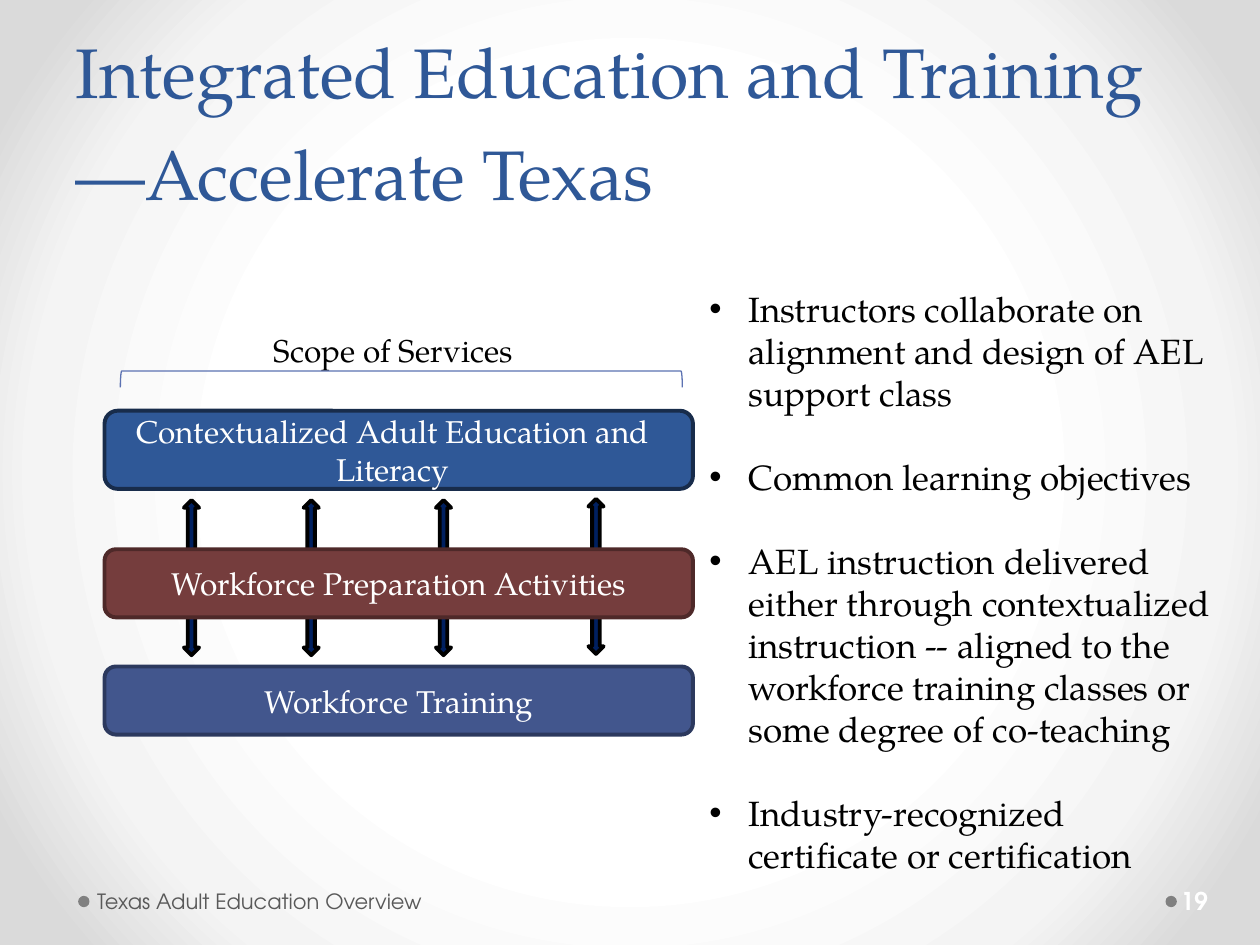
from lxml import etree
from pptx import Presentation
from pptx.dml.color import RGBColor
from pptx.enum.shapes import MSO_SHAPE
from pptx.enum.text import MSO_ANCHOR, MSO_AUTO_SIZE, PP_ALIGN
from pptx.oxml.ns import qn
from pptx.util import Inches, Pt

ROUNDED = MSO_SHAPE.ROUNDED_RECTANGLE
OVAL = MSO_SHAPE.OVAL
ARROW = MSO_SHAPE.UP_DOWN_ARROW
BRACKET = MSO_SHAPE.LEFT_BRACKET
TOP, MIDDLE, BOTTOM = MSO_ANCHOR.TOP, MSO_ANCHOR.MIDDLE, MSO_ANCHOR.BOTTOM
LEFT, CENTER = PP_ALIGN.LEFT, PP_ALIGN.CENTER
NO_AUTOFIT = MSO_AUTO_SIZE.NONE
SERIF = "TeX Gyre Pagella"
SANS = "TeX Gyre Adventor"

GRADIENT_STOPS = [(50, "FFFFFF"), (76, "F4F4F4"), (92, "DADADA")]
SERVICES = [
    ("Contextualized Adult Education and Literacy", 3.26, 0.62, "2F5897", "182C4B"),
    ("Workforce Preparation Activities", 4.36, 0.54, "753D3D", "4E2929"),
    ("Workforce Training", 5.29, 0.54, "42568D", "2C395E"),
]
ARROW_POSITIONS = [(1.46, 3.97), (2.41, 3.97), (3.46, 3.97), (4.67, 3.96)]
FEATURES = [
    "Instructors collaborate on alignment and design of AEL support class",
    "Common learning objectives",
    "AEL instruction delivered either through contextualized instruction -- "
    "aligned to the workforce training classes or some degree of co-teaching",
    "Industry-recognized certificate or certification",
]


def color(value):
    """Return the colour for a hex string."""
    return RGBColor.from_string(value)


def place(shape, left, top, width, height):
    """Move and size a shape in inches."""
    shape.left, shape.top = Inches(left), Inches(top)
    shape.width, shape.height = Inches(width), Inches(height)


def format_text(shape, size, text_color, font=SERIF, align=LEFT, anchor=MIDDLE, bold=False):
    """Format the frame, paragraphs and runs of a shape."""
    frame = shape.text_frame
    frame.word_wrap = True
    frame.auto_size = NO_AUTOFIT
    frame.vertical_anchor = anchor
    for paragraph in frame.paragraphs:
        paragraph.alignment = align
        for run in paragraph.runs:
            run.font.name = font
            run.font.size = Pt(size)
            run.font.bold = bold
            run.font.color.rgb = color(text_color)


def set_background(slide):
    """Fill the background with a circular gradient."""
    slide.background.fill.gradient()
    gradient = slide.background.fill._fill._gradFill
    for child in list(gradient):
        gradient.remove(child)
    stops = etree.SubElement(gradient, qn("a:gsLst"))
    for position, value in GRADIENT_STOPS:
        stop = etree.SubElement(stops, qn("a:gs"), pos=str(position * 1000))
        etree.SubElement(stop, qn("a:srgbClr"), val=value)
    circle = etree.SubElement(gradient, qn("a:path"), path="circle")
    etree.SubElement(circle, qn("a:fillToRect"), l="50000", t="50000", r="50000", b="50000")


def add_shape(slide, kind, box, fill=None, line=None, line_width=2.25):
    """Add a preset shape without a shadow."""
    shape = slide.shapes.add_shape(kind, *map(Inches, box))
    shape.shadow.inherit = False
    if fill:
        shape.fill.solid()
        shape.fill.fore_color.rgb = color(fill)
    else:
        shape.fill.background()
    if line:
        shape.line.color.rgb = color(line)
        shape.line.width = Pt(line_width)
    else:
        shape.line.fill.background()
    return shape


def add_label(slide, text, box, size, text_color, left_inset=0.1, **formatting):
    """Add a formatted text box."""
    label = slide.shapes.add_textbox(*map(Inches, box))
    label.text_frame.text = text
    label.text_frame.margin_left = Inches(left_inset)
    format_text(label, size, text_color, **formatting)


def add_service(slide, text, top, height, fill, line):
    """Add one service bar."""
    bar = add_shape(slide, ROUNDED, (0.83, top, 4.67, height), fill, line)
    bar.text_frame.text = text
    format_text(bar, 18, "FFFFFF", align=CENTER)
    return bar


def add_diagram(slide):
    """Draw the scope of services with its arrows behind the bars."""
    for left, top in ARROW_POSITIONS:
        add_shape(slide, ARROW, (left, top, 0.12, 1.23), "002060", "000000")
    bars = [add_service(slide, *service) for service in SERVICES]
    bars[0].text_frame.margin_left = 0
    add_label(slide, "Scope of Services", (0.83, 2.58, 4.58, 0.45), 18, "000000",
              align=CENTER, anchor=TOP)
    bracket = add_shape(slide, BRACKET, (3.12, 0.78, 0.13, 4.46), None, "5C72B2", 0.75)
    bracket.rotation = 90


def fill_title(title):
    """Write the slide title."""
    place(title, 0.5, 0, 9, 1.75)
    title.text_frame.text = "Integrated Education and Training—Accelerate Texas"
    format_text(title, 40, "2F5897", anchor=BOTTOM)
    title.text_frame.paragraphs[0].line_spacing = Pt(58)


def fill_features(body):
    """Write the bulleted feature list."""
    place(body, 5.53, 2.23, 4.25, 4.81)
    body.text_frame.text = "\n".join(FEATURES)
    format_text(body, 20, "000000", anchor=TOP)
    indent = Inches(0.31)
    for paragraph in body.text_frame.paragraphs:
        paragraph.space_before = Pt(0)
        paragraph.space_after = Pt(24)
        properties = paragraph._p.get_or_add_pPr()
        properties.set("marL", str(indent))
        properties.set("indent", str(-indent))
        etree.SubElement(properties, qn("a:buFont"), typeface="Arial")
        etree.SubElement(properties, qn("a:buChar"), char="•")


def add_footer(slide):
    """Add the footer text, slide number and their dots."""
    for left in (0.62, 9.25):
        add_shape(slide, OVAL, (left, 7.11, 0.09, 0.09), "808080")
    add_label(slide, "Texas Adult Education Overview", (0.72, 6.95, 3.11, 0.4), 12,
              "595959", left_inset=0.05, font=SANS)
    add_label(slide, "19", (9.34, 6.95, 0.61, 0.4), 14, "FFFFFF",
              left_inset=0.03, font=SANS, bold=True)


def main():
    """Build and save the presentation."""
    presentation = Presentation()
    presentation.slide_width, presentation.slide_height = Inches(10), Inches(7.5)
    slide = presentation.slides.add_slide(presentation.slide_layouts[1])
    set_background(slide)
    add_footer(slide)
    add_diagram(slide)
    fill_features(slide.placeholders[1])
    fill_title(slide.shapes.title)
    presentation.save("out.pptx")


if __name__ == "__main__":
    main()
